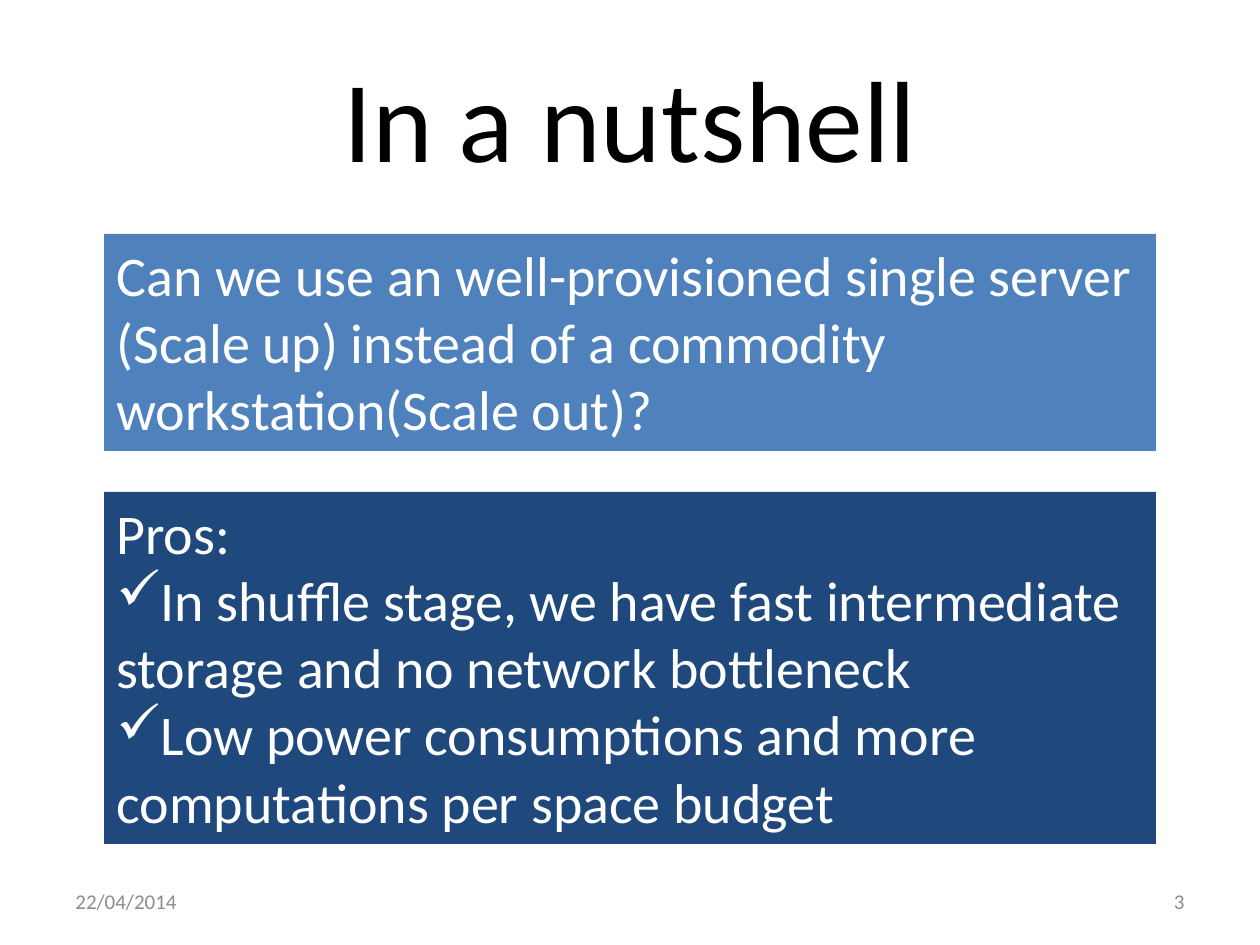
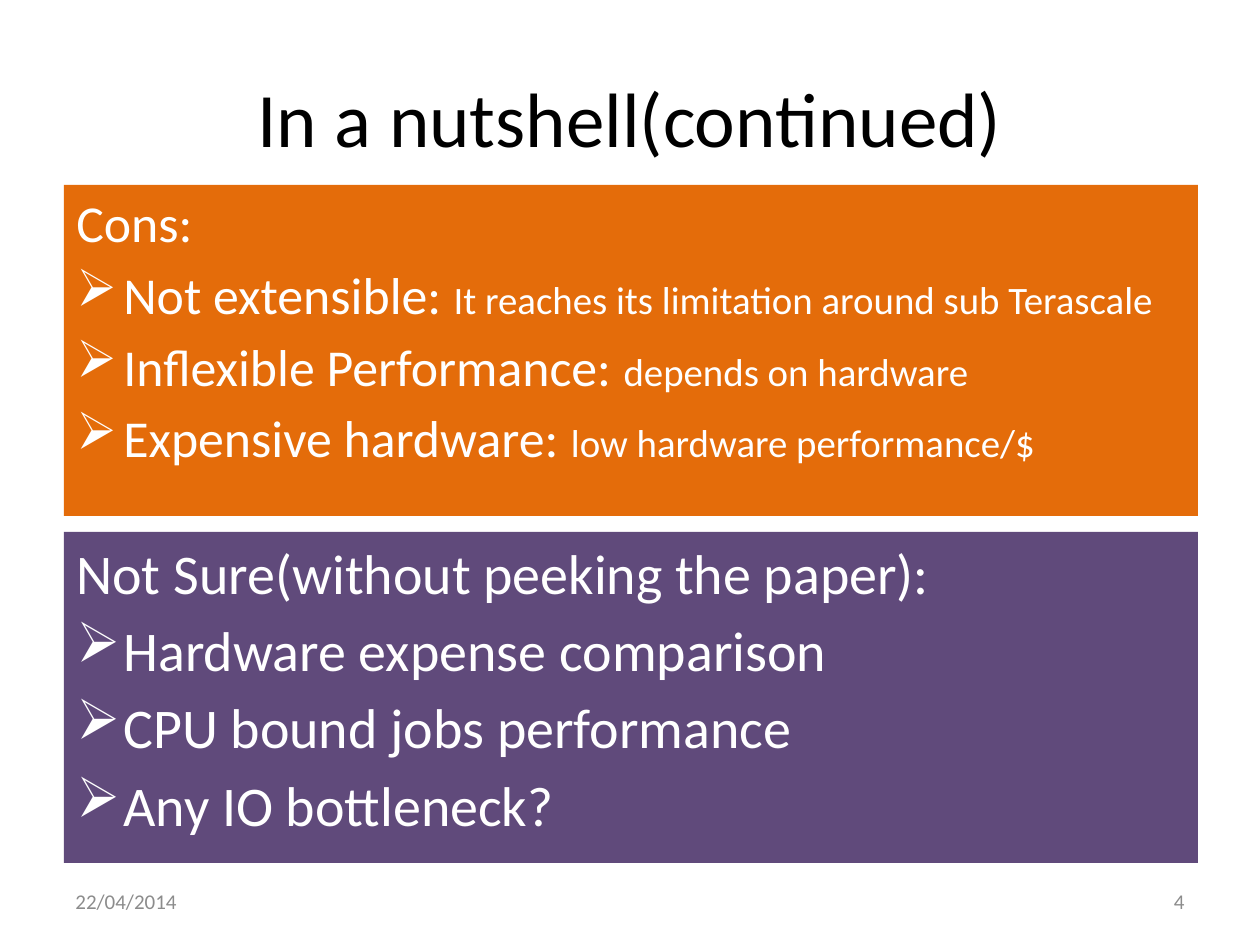
import pptx
import pptx.dml.color
import pptx.enum.shapes
import pptx.enum.text
import pptx.oxml
import pptx.oxml.ns
import pptx.util

EMU_PER_PX = 914400 / 126
FONT = "Calibri"
WHITE, BLACK, GREY = "FFFFFF", "000000", "8C8C8C"
BLUE, NAVY, ORANGE, PURPLE = "4F81BD", "1F497D", "E46C0A", "604A7B"
DATE = "22/04/2014"
ALIGN = pptx.enum.text.PP_ALIGN
ANCHOR = pptx.enum.text.MSO_ANCHOR


def px(length):
    """Turn px into EMU."""
    return pptx.util.Emu(round(length * EMU_PER_PX))


def color(hex_code):
    """Turn a hex string into a colour."""
    return pptx.dml.color.RGBColor.from_string(hex_code)


def style_paragraph(paragraph, size, hex_code, align=ALIGN.LEFT):
    """Set the alignment and font of a paragraph."""
    paragraph.alignment = align
    paragraph.font.name = FONT
    paragraph.font.size = pptx.util.Pt(size)
    paragraph.font.color.rgb = color(hex_code)


def add_bullet(paragraph, mark):
    """Put a white bullet mark before a paragraph."""
    properties = paragraph._p.get_or_add_pPr()
    namespace = pptx.oxml.ns.nsdecls("a")
    for xml in (f'<a:buClr {namespace}><a:srgbClr val="{WHITE}"/></a:buClr>',
                f'<a:buChar {namespace} char="{mark}"/>'):
        properties.append(pptx.oxml.parse_xml(xml))


def indent_paragraph(paragraph, hanging):
    """Give a paragraph a hanging indent."""
    properties = paragraph._p.get_or_add_pPr()
    properties.set("marL", str(px(hanging)))
    properties.set("indent", str(-px(hanging)))


def add_label(slide, box, text, size, hex_code, align):
    """Add one line of text, centred vertically in its box."""
    frame = slide.shapes.add_textbox(*map(px, box)).text_frame
    frame.word_wrap = True
    frame.vertical_anchor = ANCHOR.MIDDLE
    frame.text = text
    style_paragraph(frame.paragraphs[0], size, hex_code, align)


def add_panel(slide, box, fill, items, size=32, mark=None, hanging=0, gap=0):
    """Add a filled panel whose first item is a heading and the rest bullets."""
    panel = slide.shapes.add_shape(
        pptx.enum.shapes.MSO_SHAPE.RECTANGLE, *map(px, box))
    panel.shadow.inherit = False
    panel.fill.solid()
    panel.fill.fore_color.rgb = color(fill)
    panel.line.fill.background()
    frame = panel.text_frame
    frame.word_wrap = True
    frame.vertical_anchor = ANCHOR.TOP
    for index, (lead, detail) in enumerate(items):
        paragraph = frame.paragraphs[0] if index == 0 else frame.add_paragraph()
        if hanging:
            indent_paragraph(paragraph, hanging)
        if index:
            add_bullet(paragraph, mark)
            paragraph.space_before = pptx.util.Pt(gap)
        style_paragraph(paragraph, size, WHITE)
        paragraph.add_run().text = lead
        if detail:
            explanation = paragraph.add_run()
            explanation.text = detail
            explanation.font.size = pptx.util.Pt(size * 0.75)


def add_page(deck, title, title_size, number):
    """Add a blank slide with its title, date and page number."""
    slide = deck.slides.add_slide(deck.slide_layouts[6])
    add_label(slide, (63, 38, 1134, 157), title, title_size, BLACK, ALIGN.CENTER)
    add_label(slide, (63, 876, 294, 50), DATE, 12, GREY, ALIGN.LEFT)
    add_label(slide, (903, 876, 294, 50), str(number), 12, GREY, ALIGN.RIGHT)
    return slide


def main():
    """Build the two slides and save them."""
    deck = pptx.Presentation()
    deck.slide_width, deck.slide_height = px(1260), px(945)

    summary = add_page(deck, "In a nutshell", 66, 3)
    add_panel(summary, (104, 234, 1052, 217), BLUE, [
        ("Can we use an well-provisioned single server (Scale up) instead of "
         "a commodity workstation(Scale out)?", ""),
    ])
    add_panel(summary, (104, 492, 1052, 352), NAVY, [
        ("Pros:", ""),
        ("In shuffle stage, we have fast intermediate storage and no network "
         "bottleneck", ""),
        ("Low power consumptions and more computations per space budget", ""),
    ], mark="✓")

    continued = add_page(deck, "In a nutshell(continued)", 44, 4)
    add_panel(continued, (64, 185, 1134, 331), ORANGE, [
        ("Cons:", ""),
        ("Not extensible: ", "It reaches its limitation around sub Terascale"),
        ("Inflexible Performance: ", "depends on hardware"),
        ("Expensive hardware: ", "low hardware performance/$"),
    ], size=29.6, mark="➢", hanging=47, gap=5.4)
    add_panel(continued, (64, 532, 1134, 331), PURPLE, [
        ("Not Sure(without peeking the paper):", ""),
        ("Hardware expense comparison", ""),
        ("CPU bound jobs performance", ""),
        ("Any IO bottleneck?", ""),
    ], mark="➢", hanging=47, gap=5.8)

    deck.save("out.pptx")


if __name__ == "__main__":
    main()
